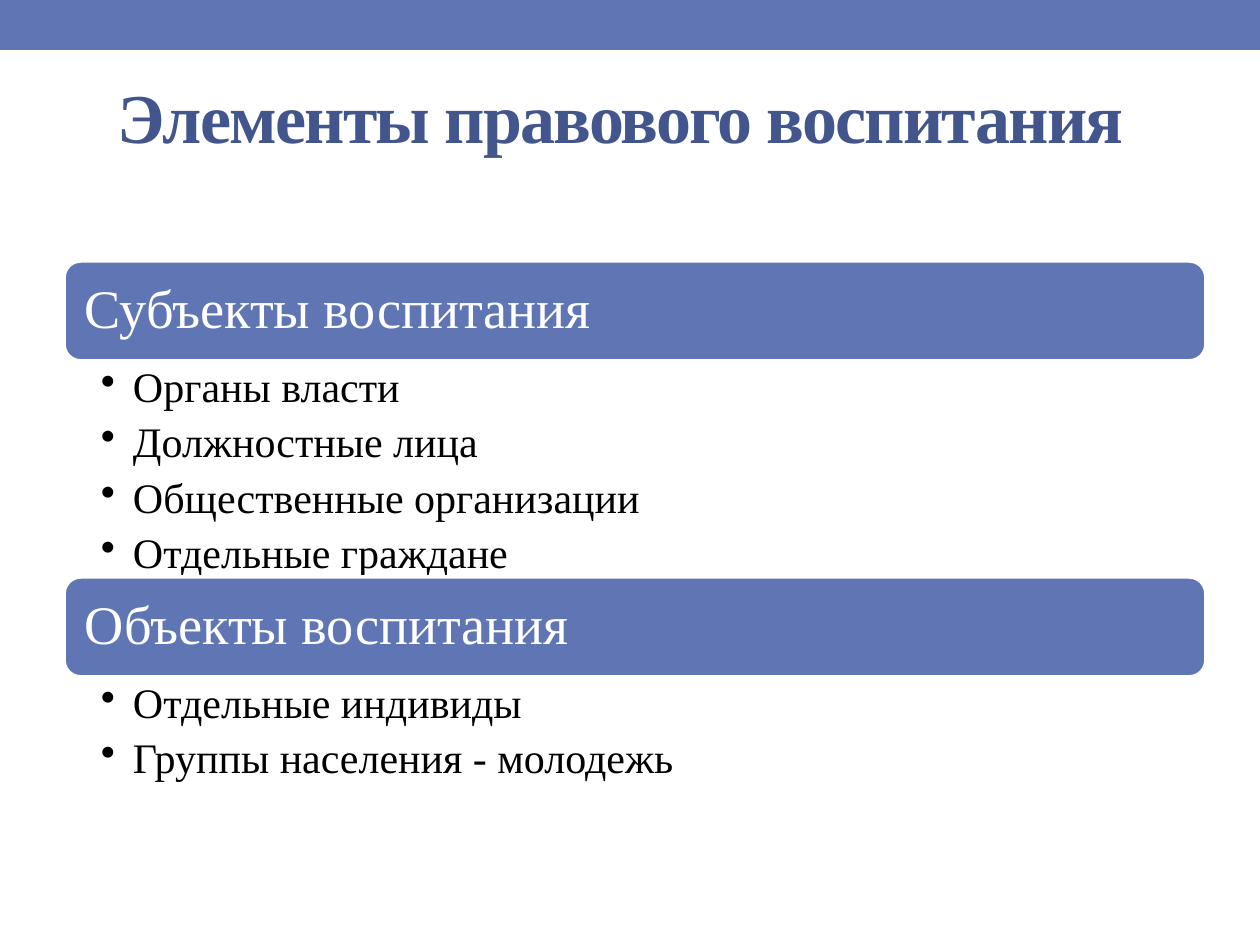
from pptx import Presentation
from pptx.dml.color import RGBColor
from pptx.enum.shapes import MSO_SHAPE
from pptx.enum.text import MSO_ANCHOR, PP_ALIGN
from pptx.util import Emu, Pt
from lxml.etree import SubElement
from pptx.oxml.ns import qn

SCALE = 914400 // 126
BLUE, NAVY, WHITE, BLACK = "6076B4", "42568D", "FFFFFF", "000000"
LEFT, WIDTH, BAR = 64, 1142, 100
GROUPS = [
    (261, 217, "Субъекты воспитания",
     ["Органы власти", "Должностные лица",
      "Общественные организации", "Отдельные граждане"]),
    (577, 108, "Объекты воспитания",
     ["Отдельные индивиды", "Группы населения - молодежь"]),
]


def px(num):
    return Emu(num * SCALE)


def color(code):
    return RGBColor.from_string(code)


class Deck:
    face = "Times New Roman"

    def __init__(self, slide):
        self.slide = slide

    def frame(self, shape, lines, size, ink, pad, anchor, bold=None):
        """Fill a shape with styled lines and return its paragraphs."""
        text = shape.text_frame
        text.word_wrap = True
        text.vertical_anchor = anchor
        (text.margin_left, text.margin_top,
         text.margin_right, text.margin_bottom) = map(px, pad)
        text.text = "\n".join(lines)
        for par in text.paragraphs:
            par.alignment = PP_ALIGN.LEFT
            font = par.font
            font.name, font.size, font.bold = self.face, Pt(size), bold
            font.color.rgb = color(ink)
        return text.paragraphs

    def block(self, kind, *box):
        shape = self.slide.shapes.add_shape(kind, *map(px, box))
        shape.shadow.inherit = False
        shape.fill.solid()
        shape.fill.fore_color.rgb = color(BLUE)
        shape.line.fill.background()
        return shape

    def title(self, words, *box):
        shape = self.slide.shapes.add_textbox(*map(px, box))
        par, = self.frame(shape, [words], 40, NAVY, (13, 6, 13, 6),
                          MSO_ANCHOR.MIDDLE, True)
        par.runs[0].font._element.set("spc", "-100")

    def head(self, words, *box):
        shape = self.block(MSO_SHAPE.ROUNDED_RECTANGLE, *box)
        shape.line.color.rgb = color(WHITE)
        shape.line.width = Pt(2.08)
        par, = self.frame(shape, [words], 31, WHITE, (16, 16, 16, 16),
                          MSO_ANCHOR.MIDDLE)
        par.line_spacing = 0.9

    def bullets(self, lines, *box):
        shape = self.slide.shapes.add_textbox(*map(px, box))
        for par in self.frame(shape, lines, 24, BLACK, (37, 5, 30, 5),
                              MSO_ANCHOR.TOP):
            par.line_spacing = 0.9
            par.space_after = Pt(5.8)
            props = par._p.get_or_add_pPr()
            props.set("marL", str(px(32)))
            props.set("indent", str(-px(32)))
            mark = SubElement(props, qn("a:buChar"))
            mark.set("char", "•")
            # The schema wants the bullet ahead of the default run style.
            props.find(qn("a:defRPr")).addprevious(mark)


def main():
    show = Presentation()
    show.slide_width, show.slide_height = px(1260), px(945)
    deck = Deck(show.slides.add_slide(show.slide_layouts[6]))
    deck.block(MSO_SHAPE.RECTANGLE, 0, 0, 1260, 50)
    deck.title("Элементы правового воспитания", 105, 37, 1071, 157)
    for top, high, name, items in GROUPS:
        deck.head(name, LEFT, top, WIDTH, BAR)
        deck.bullets(items, LEFT, top + BAR, WIDTH, high)
    show.save("out.pptx")


if __name__ == "__main__":
    main()
